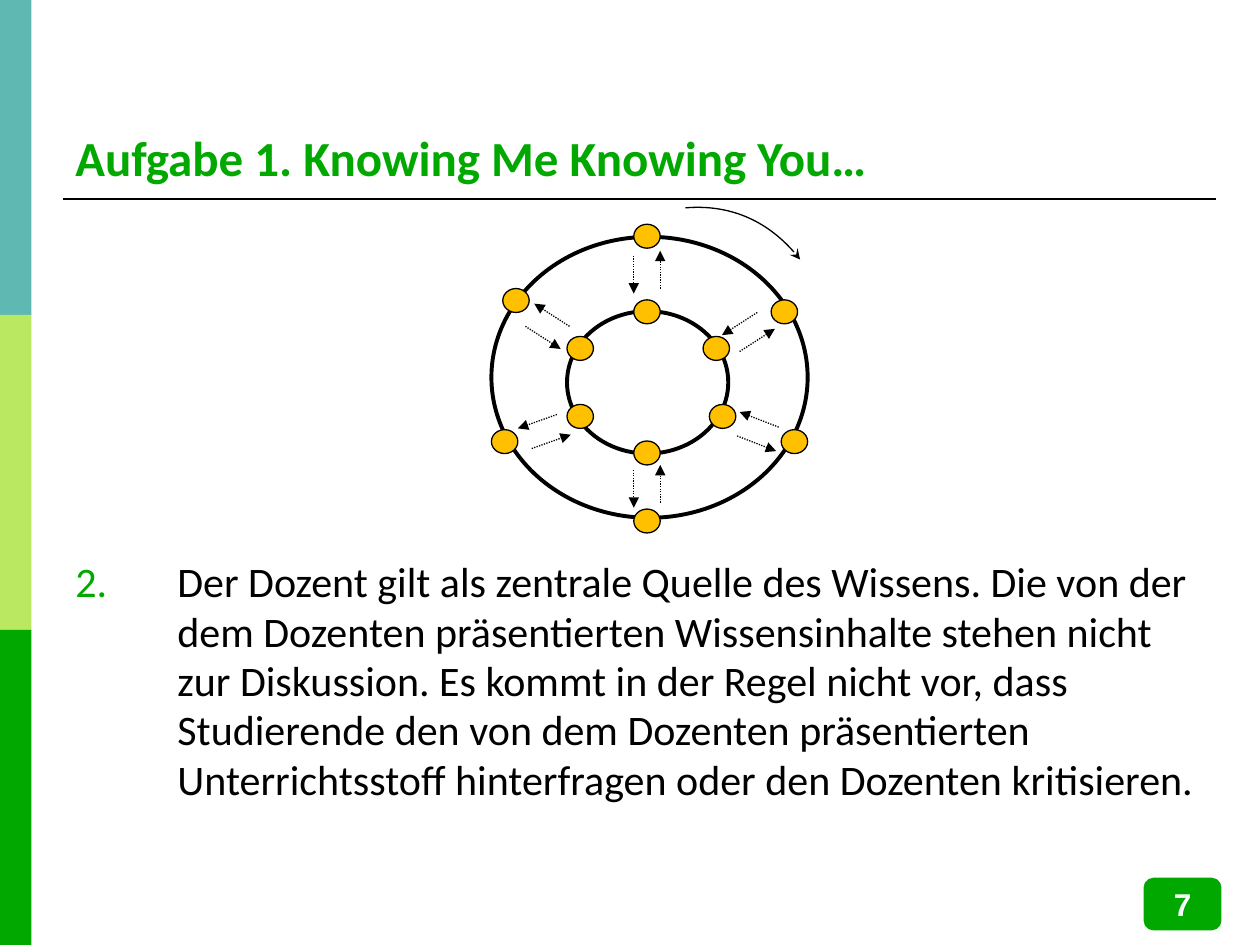
from collections import namedtuple
from dataclasses import dataclass
from lxml.etree import SubElement
from pptx import Presentation
from pptx.dml.color import RGBColor
from pptx.enum.dml import MSO_LINE
from pptx.enum.shapes import MSO_CONNECTOR, MSO_SHAPE
from pptx.enum.text import MSO_ANCHOR, PP_ALIGN
from pptx.oxml.ns import qn
from pptx.util import Inches, Pt

Box = namedtuple("Box", "x y w h")


@dataclass(frozen=True)
class Theme:
    teal: str = "5FB8B2"
    lime: str = "BAE860"
    green: str = "00A800"
    gold: str = "FFC000"
    black: str = "000000"
    white: str = "FFFFFF"
    font: str = "Calibri"
    plain: str = "Arial"
    head: int = 28
    body: int = 24
    foot: int = 18
    thin: float = 0.75
    rule: float = 1.5
    edge: float = 2
    ring: float = 2.25


theme = Theme()
COLS, ROWS = 100, 75
UNIT = Inches(10) / COLS


def grid(*nums):
    return [round(n * UNIT) for n in nums]


def color(hue):
    return RGBColor.from_string(hue)


def draw(slide, kind, box, fill, line=None, width=0):
    shape = slide.shapes.add_shape(kind, *grid(*box))
    shape.shadow.inherit = False
    shape.fill.solid()
    shape.fill.fore_color.rgb = color(fill)
    if line:
        shape.line.color.rgb = color(line)
        shape.line.width = Pt(width)
    else:
        shape.line.fill.background()
    return shape


def tip(shape, kind):
    SubElement(shape.line._get_or_add_ln(), qn("a:tailEnd"), type=kind)


def join(slide, start, end, width):
    line = slide.shapes.add_connector(
        MSO_CONNECTOR.STRAIGHT, *grid(*start, *end))
    line.line.color.rgb = color(theme.black)
    line.line.width = Pt(width)
    SubElement(line._element.spPr, qn("a:effectLst"))
    return line


def style(para, size, hue, font, bold=False):
    for run in para.runs:
        run.font.size = Pt(size)
        run.font.name = font
        run.font.bold = bold
        run.font.color.rgb = color(hue)


def write(slide, box, text):
    frame = slide.shapes.add_textbox(*grid(*box)).text_frame
    frame.word_wrap = True
    frame.text = text
    return frame


def stripe(slide, box):
    step = box.h / 3
    for row, hue in enumerate((theme.teal, theme.lime, theme.green)):
        part = Box(box.x, box.y + row * step, box.w, step)
        draw(slide, MSO_SHAPE.RECTANGLE, part, hue)


def title(slide, box, text):
    frame = write(slide, box, text)
    frame.vertical_anchor = MSO_ANCHOR.BOTTOM
    style(frame.paragraphs[0], theme.head, theme.green, theme.font, True)
    base = box.y + box.h + 0.5
    join(slide, (box.x, base), (box.x + box.w, base), theme.rule)


def sweep(slide, points):
    first, *rest = [grid(*point) for point in points]
    build = slide.shapes.build_freeform(*first)
    build.add_line_segments(rest, close=False)
    shape = build.convert_to_shape()
    shape.shadow.inherit = False
    shape.fill.background()
    shape.line.color.rgb = color(theme.black)
    shape.line.width = Pt(theme.thin)
    tip(shape, "stealth")
    route = next(shape._element.iter(qn("a:moveTo"))).getparent()
    curve = SubElement(route, qn("a:cubicBezTo"))
    for piece in route.findall(qn("a:lnTo")):
        curve.append(piece[0])
        route.remove(piece)


def rings(slide, box):
    def at(x, y):
        return box.x + x, box.y + y

    inner = Box(*at(6, 5.9), 12.8, 11.3)
    for ring in (box, inner):
        draw(slide, MSO_SHAPE.OVAL, ring, theme.white, theme.black, theme.ring)

    outer = ((11.3, -1), (0.9, 4.1), (0, 15.3),
             (11.3, 21.6), (22.2, 5), (23, 15.3))
    near = ((11.3, 5), (6, 7.9), (6, 13.3),
            (11.3, 16.2), (16.8, 7.9), (17.3, 13.3))
    for spot in outer + near:
        draw(slide, MSO_SHAPE.FLOWCHART_CONNECTOR, Box(*at(*spot), 2.1, 1.9),
             theme.gold, theme.black, theme.thin)

    pairs = (((11.3, 1.5), (13.4, 4.1), (0, 3)),
             ((11.3, 18.5), (13.4, 21.1), (0, 3)),
             ((2.7, 7.1), (6.2, 7.1), (2.8, 1.8)),
             ((3.2, 16.8), (5.2, 14.1), (3.1, -1.1)),
             ((19.7, 9.1), (21.1, 6), (2.8, -1.8)),
             ((19.5, 15.8), (22.8, 15.1), (3.1, 1.2)))
    for there, back, (dx, dy) in pairs:
        for (x, y), sign in ((there, 1), (back, -1)):
            line = join(slide, at(x, y), at(x + sign * dx, y + sign * dy),
                        theme.thin)
            line.line.dash_style = MSO_LINE.ROUND_DOT
            tip(line, "triangle")

    bend = ((15.4, -2.3), (18.9, -2.6), (22.3, -1.1), (24.5, 1.8))
    sweep(slide, [at(*point) for point in bend])


def item(slide, box, text, start):
    para = write(slide, box, text).paragraphs[0]
    props = para._p.get_or_add_pPr()
    hang = grid(8.1)[0]
    props.set("marL", str(hang))
    props.set("indent", str(-hang))
    hue = SubElement(props, qn("a:buClr"))
    SubElement(hue, qn("a:srgbClr"), val=theme.green)
    SubElement(props, qn("a:buFont"), typeface=theme.font)
    SubElement(props, qn("a:buAutoNum"), type="arabicPeriod",
               startAt=str(start))
    para.line_spacing = 0.98
    style(para, theme.body, theme.black, theme.font)


def badge(slide, box, text):
    shape = draw(slide, MSO_SHAPE.ROUNDED_RECTANGLE, box,
                 theme.green, theme.green, theme.edge)
    frame = shape.text_frame
    frame.text = text
    frame.vertical_anchor = MSO_ANCHOR.MIDDLE
    para = frame.paragraphs[0]
    para.alignment = PP_ALIGN.CENTER
    style(para, theme.foot, theme.white, theme.plain, True)


def main():
    deck = Presentation()
    deck.slide_width, deck.slide_height = grid(COLS, ROWS)
    slide = deck.slides.add_slide(deck.slide_layouts[6])
    stripe(slide, Box(0, 0, 2.5, ROWS))
    title(slide, Box(5, 2.8, 91.5, 12.5), "Aufgabe 1. Knowing Me Knowing You…")
    item(slide, Box(5, 43.8, 91.5, 29.1),
         "Der Dozent gilt als zentrale Quelle des Wissens. Die von der dem "
         "Dozenten präsentierten Wissensinhalte stehen nicht zur Diskussion. "
         "Es kommt in der Regel nicht vor, dass Studierende den von dem "
         "Dozenten präsentierten Unterrichtsstoff hinterfragen oder den "
         "Dozenten kritisieren.", 2)
    rings(slide, Box(39, 18.8, 25.1, 22.3))
    badge(slide, Box(90.9, 69.8, 5.9, 3.9), "7")
    deck.save("out.pptx")


if __name__ == "__main__":
    main()
